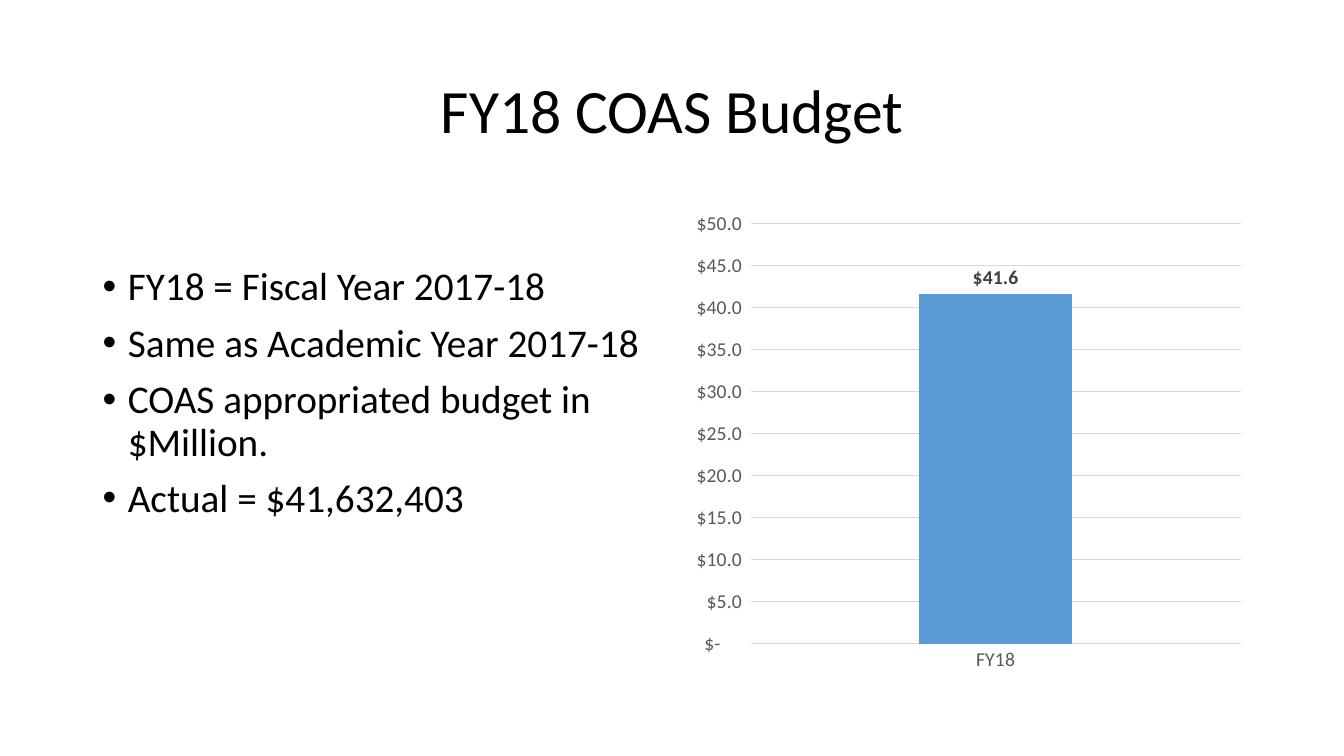
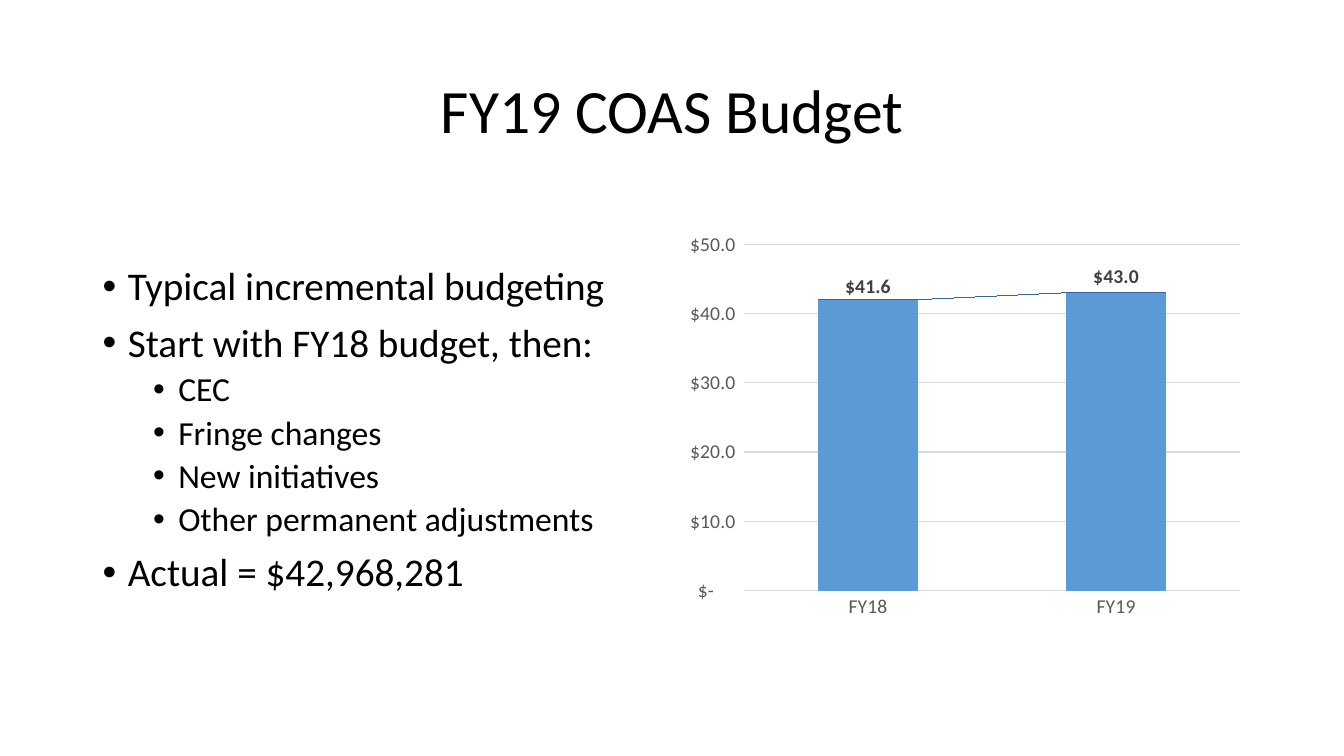
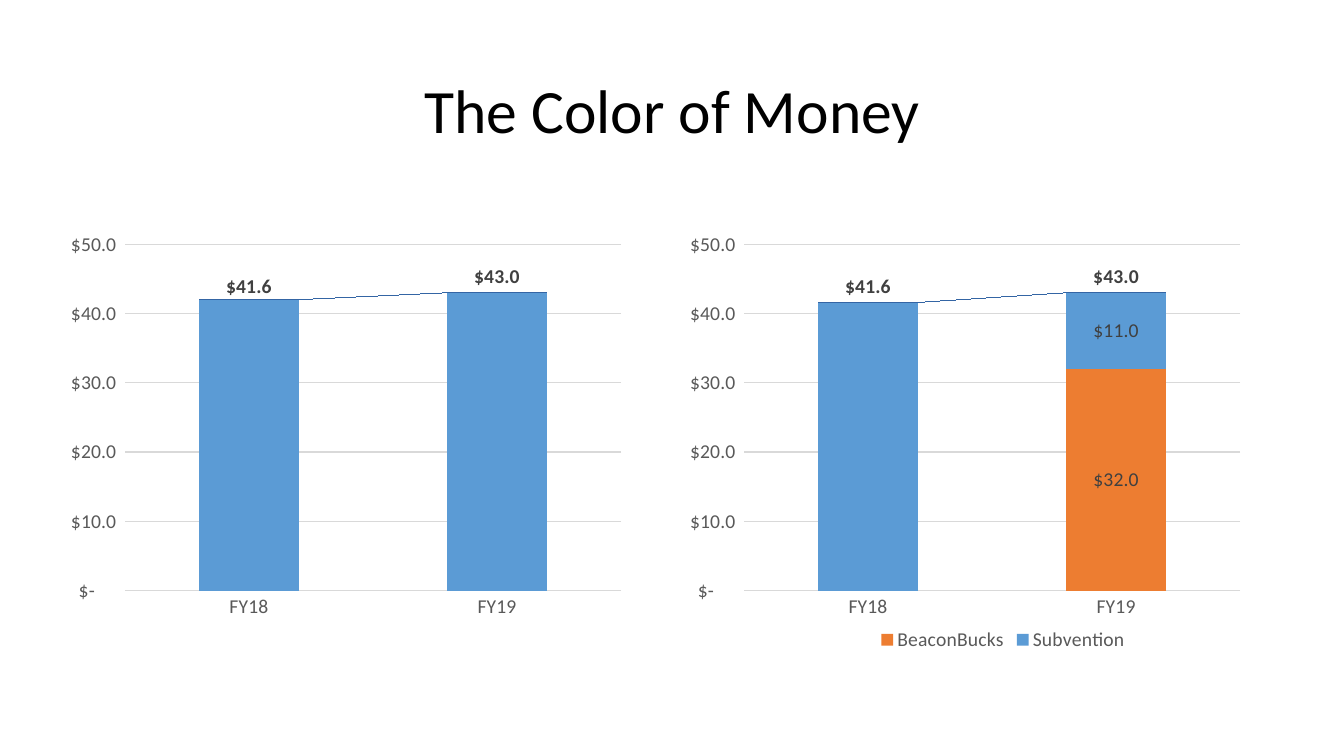
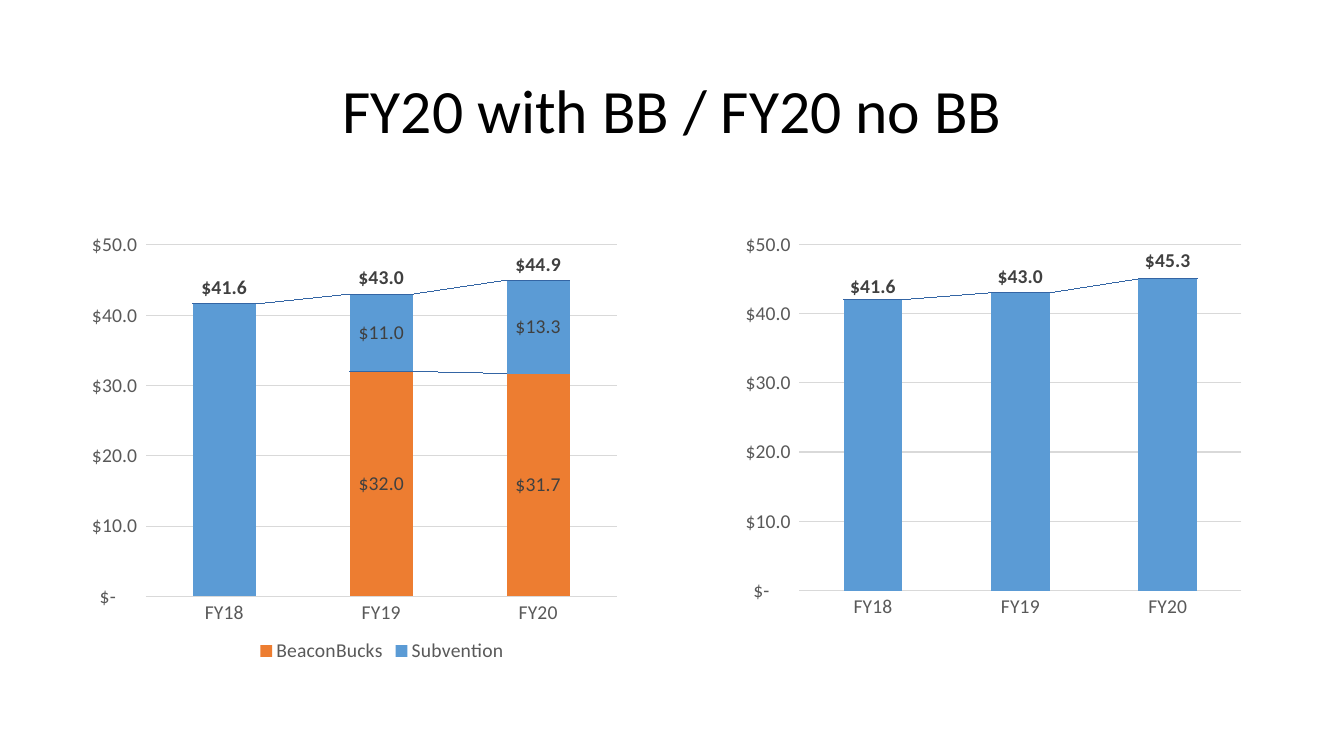
from lxml import etree
from pptx import Presentation
from pptx.chart.data import CategoryChartData
from pptx.dml.color import RGBColor
from pptx.enum.chart import (XL_CHART_TYPE, XL_LABEL_POSITION, XL_LEGEND_POSITION,
                             XL_MARKER_STYLE, XL_TICK_MARK)
from pptx.enum.text import MSO_ANCHOR, PP_ALIGN
from pptx.oxml import parse_xml
from pptx.oxml.ns import qn
from pptx.util import Inches, Pt

CLUSTER, STACK = XL_CHART_TYPE.COLUMN_CLUSTERED, XL_CHART_TYPE.COLUMN_STACKED
ABOVE, OUTSIDE = XL_LABEL_POSITION.ABOVE, XL_LABEL_POSITION.OUTSIDE_END
BOTTOM, NO_MARK, NO_TICK = XL_LEGEND_POSITION.BOTTOM, XL_MARKER_STYLE.NONE, XL_TICK_MARK.NONE
MIDDLE, CENTER = MSO_ANCHOR.MIDDLE, PP_ALIGN.CENTER

# Shared look
FACE = "Calibri"
BLACK, GREY, DARK, RULE = "000000", "595959", "404040", "D9D9D9"
BLUE, ORANGE, LINK = "5B9BD5", "ED7D31", "2F5597"
MONEY = '_("$"* #,##0.0_);_("$"* \\(#,##0.0\\);_("$"* "-"??_);_(@_)'
TITLE_BOX = (0.92, 0.4, 11.5, 1.45)
BODY_BOX = (0.92, 2, 5.67, 4.76)
RIGHT_BOX = (6.75, 2, 5.67, 4.76)
PLOT = {"x": 0.111, "y": 0.089, "w": 0.868, "h": 0.722}
# size, left margin and space before, by bullet level
LEVELS = [(28, 0.25, 10), (24, 0.75, 5)]
CHART_NS = 'xmlns:c="http://schemas.openxmlformats.org/drawingml/2006/chart"'

# Content
YEARS = ["FY18", "FY19", "FY20"]
TWO = [41.6, 43]


def plain(box, vals):
    """Bars in whole millions under exact totals."""
    return {"box": box, "tops": ("Series 2", vals),
            "bars": [("Series 1", [round(v) for v in vals], BLUE)]}


def split(box, bucks, rest, tops, legend):
    return {"box": box, "tops": ("", tops), "legend": legend,
            "bars": [("BeaconBucks", bucks, ORANGE), ("Subvention", rest, BLUE)]}


SLIDES = [
    {"title": "FY18 COAS Budget",
     "body": [(0, "FY18 = Fiscal Year 2017-18"),
              (0, "Same as Academic Year 2017-18"),
              (0, "COAS appropriated budget in $Million."),
              (0, "Actual = $41,632,403")],
     "charts": [{"box": RIGHT_BOX, "bars": [("Series 1", [41.6], BLUE)]}]},
    {"title": "FY19 COAS Budget",
     "body": [(0, "Typical incremental budgeting"),
              (0, "Start with FY18 budget, then:"),
              (1, "CEC"),
              (1, "Fringe changes"),
              (1, "New initiatives"),
              (1, "Other permanent adjustments"),
              (0, "Actual = $42,968,281")],
     "charts": [plain(RIGHT_BOX, TWO)]},
    {"title": "The Color of Money",
     "charts": [plain((0.61, 2, 5.67, 4.76), TWO),
                split(RIGHT_BOX, [None, 32], [41.6, 11], TWO, {"x": 0.34, "y": 0.88})]},
    {"title": "FY20 with BB / FY20 no BB",
     "charts": [split((0.85, 2, 5.38, 4.83), [None, 32, 31.7],
                      [41.6, 11, 13.3], TWO + [44.9], {"x": 0.31, "y": 0.89}),
                plain((7.35, 2, 5.07, 4.76), TWO + [45.3])]},
]


def rgb(code):
    return RGBColor.from_string(code)


def apply(obj, **fmt):
    for key, val in fmt.items():
        setattr(obj, key, val)


def style(font, size, color, bold=False):
    apply(font, name=FACE, size=Pt(size), bold=bold)
    font.color.rgb = rgb(color)


def stroke(line, color):
    line.color.rgb = rgb(color)
    line.width = Pt(0.75)


def frame(slide, box):
    text = slide.shapes.add_textbox(*map(Inches, box)).text_frame
    text.word_wrap = True
    return text


def add_title(slide, words):
    text = frame(slide, TITLE_BOX)
    text.vertical_anchor = MIDDLE
    para = text.paragraphs[0]
    apply(para, text=words, alignment=CENTER, line_spacing=0.9)
    style(para.runs[0].font, 44, BLACK)


def add_body(slide, items):
    text = frame(slide, BODY_BOX)
    text.margin_top = Inches(0.65)
    for i, (level, words) in enumerate(items):
        size, left, gap = LEVELS[level]
        para = text.add_paragraph() if i else text.paragraphs[0]
        apply(para, text=words, level=level, line_spacing=0.9,
              space_before=Pt(gap if i else 0))
        style(para.runs[0].font, size, BLACK)
        props = para._p.get_or_add_pPr()
        props.set("marL", str(Inches(left)))
        props.set("indent", str(-Inches(0.25)))
        etree.SubElement(props, qn("a:buFont")).set("typeface", "Arial")
        etree.SubElement(props, qn("a:buChar")).set("char", "•")


def add_labels(series, bold=False, place=None):
    labels = series.data_labels
    apply(labels, show_value=True, number_format=MONEY, number_format_is_linked=False)
    style(labels.font, 14, DARK, bold)
    if place is not None:
        labels.position = place
    return labels


def set_axes(chart, step):
    cat, val = chart.category_axis, chart.value_axis
    for axis in (cat, val):
        apply(axis, major_tick_mark=NO_TICK, minor_tick_mark=NO_TICK)
        style(axis.tick_labels.font, 14, GREY)
    stroke(cat.format.line, RULE)
    val.format.line.fill.background()
    apply(val, minimum_scale=0, maximum_scale=50, major_unit=step, has_major_gridlines=True)
    stroke(val.major_gridlines.format.line, RULE)
    apply(val.tick_labels, number_format=MONEY, number_format_is_linked=False)


def layout(place, target=""):
    """A fixed place, in fractions of the chart."""
    sizes = "".join(f'<c:{k} val="{v}"/>' for k, v in place.items())
    return parse_xml(f'<c:layout {CHART_NS}><c:manualLayout>{target}<c:xMode val="edge"/>'
                     f'<c:yMode val="edge"/>{sizes}</c:manualLayout></c:layout>')


def clear(node, tag):
    for old in node.findall(qn(tag)):
        node.remove(old)


def fix_plot(chart):
    area = chart._chartSpace.chart.plotArea
    clear(area, "c:layout")
    area.insert(0, layout(PLOT, '<c:layoutTarget val="inner"/>'))


def add_tops(chart):
    """Turn the last series into a hidden line that carries the totals."""
    bars = chart._chartSpace.chart.plotArea.find(qn("c:barChart"))
    last = bars.findall(qn("c:ser"))[-1]
    clear(last, "c:invertIfNegative")
    ids = bars.findall(qn("c:axId"))
    axes = "".join(f'<c:axId val="{a.get("val")}"/>' for a in ids)
    line = parse_xml(f'<c:lineChart {CHART_NS}><c:grouping val="standard"/>'
                     f'<c:varyColors val="0"/><c:marker val="1"/>{axes}</c:lineChart>')
    line.insert(2, last)
    bars.addnext(line)
    # Lines that join the stacked bars
    ids[0].addprevious(parse_xml(
        f'<c:serLines {CHART_NS} xmlns:a="http://schemas.openxmlformats.org/drawingml/2006/main">'
        f'<c:spPr><a:ln w="9525"><a:solidFill><a:srgbClr val="{LINK}"/></a:solidFill></a:ln>'
        '</c:spPr></c:serLines>'))
    tops = chart.plots[1].series[0]
    tops.smooth = False
    tops.format.line.fill.background()
    tops.marker.style = NO_MARK
    add_labels(tops, True, ABOVE)


def add_legend(chart, place, hide):
    chart.has_legend = True
    legend = chart.legend
    apply(legend, position=BOTTOM, include_in_layout=False)
    style(legend.font, 14, GREY)
    clear(legend._element, "c:layout")
    entry = parse_xml(f'<c:legendEntry {CHART_NS}><c:idx val="{hide}"/>'
                      '<c:delete val="1"/></c:legendEntry>')
    legend._element.find(qn("c:legendPos")).addnext(entry)
    entry.addnext(layout(place))


def add_chart(slide, box, bars, tops=None, legend=None):
    data = CategoryChartData()
    data.categories = YEARS[:len(bars[0][1])]
    for name, vals, _ in bars:
        data.add_series(name, vals)
    if tops:
        data.add_series(*tops)
    kind = STACK if tops else CLUSTER
    chart = slide.shapes.add_chart(kind, *map(Inches, box), data).chart
    apply(chart, has_title=False, has_legend=False)
    style(chart.font, 10, BLACK)
    set_axes(chart, 10 if tops else 5)
    plot = chart.plots[0]
    apply(plot, vary_by_categories=False, gap_width=150 if tops else 219,
          overlap=100 if tops else -27)
    for series, (_, _, color) in zip(plot.series, bars):
        series.format.fill.solid()
        series.format.fill.fore_color.rgb = rgb(color)
    if tops:
        fix_plot(chart)
        add_tops(chart)
    else:
        add_labels(plot.series[0], True, OUTSIDE)
    if legend:
        for series in chart.plots[0].series:
            labels = add_labels(series)
            # The first year shows its total only
            labels._element.insert(0, parse_xml(
                f'<c:dLbl {CHART_NS}><c:idx val="0"/><c:delete val="1"/></c:dLbl>'))
        add_legend(chart, legend, len(bars))


def main():
    deck = Presentation()
    apply(deck, slide_width=Inches(13.33), slide_height=Inches(7.5))
    for page in SLIDES:
        slide = deck.slides.add_slide(deck.slide_layouts[6])
        add_title(slide, page["title"])
        if "body" in page:
            add_body(slide, page["body"])
        for chart in page["charts"]:
            add_chart(slide, **chart)
    deck.save("out.pptx")


if __name__ == "__main__":
    main()
